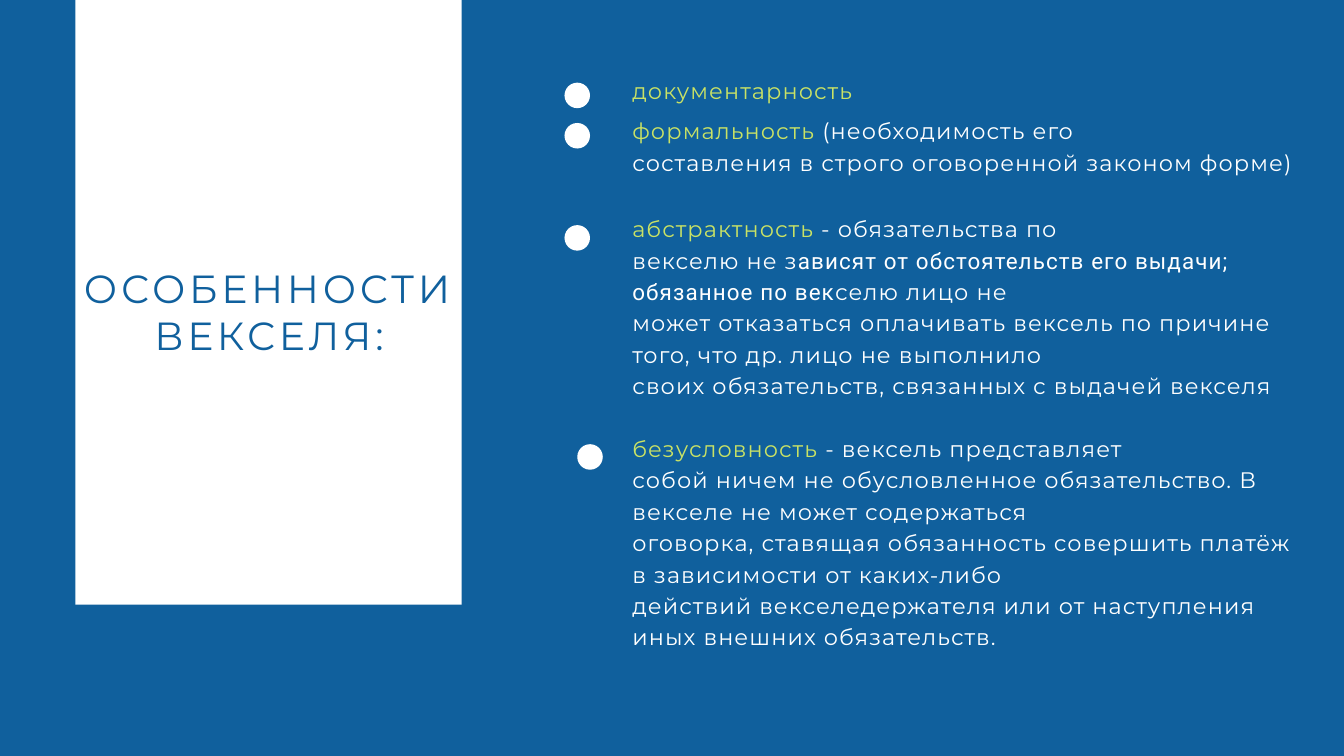
from pptx import Presentation
from pptx.dml.color import RGBColor
from pptx.enum.shapes import MSO_SHAPE as SHAPE
from pptx.enum.text import MSO_ANCHOR as ANCHOR, MSO_AUTO_SIZE as AUTO_SIZE, PP_ALIGN as ALIGN
from pptx.util import Inches, Pt

BLUE, WHITE, LIME = "10609D", "FFFFFF", "C9E265"
FONT, ALT_FONT = "Montserrat", "Roboto"
TEXT_LEFT, TEXT_WIDTH = 9.41, 9.84
DOT_LEFT, DOT_SIZE = 8.4, 0.38

# Each feature: text top, height, dot left, dot top, alignment, term, paragraphs of (text, font) runs
FEATURES = [
    (1.08, 0.43, DOT_LEFT, 1.23, ALIGN.JUSTIFY, "документарность", [[]]),
    (1.68, 1.35, DOT_LEFT, 1.83, ALIGN.JUSTIFY, "формальность ", [
        [("(необходимость его", FONT)],
        [("составления в строго оговоренной законом форме)", FONT)],
    ]),
    (3.14, 3.18, DOT_LEFT, 3.35, ALIGN.LEFT, "абстрактность ", [
        [("- обязательства по", FONT)],
        [("векселю не з", FONT),
         ("ависят от обстоятельств его выдачи; обязанное по век", ALT_FONT),
         ("селю лицо не", FONT)],
        [("может отказаться оплачивать вексель по причине того, что др. лицо не выполнило", FONT)],
        [("своих обязательств, связанных с выдачей векселя", FONT)],
    ]),
    (6.41, 3.18, DOT_LEFT + 0.19, 6.61, ALIGN.LEFT, "безусловность ", [
        [("- вексель представляет", FONT)],
        [("собой ничем не обусловленное обязательство. В векселе не может содержаться", FONT)],
        [("оговорка, ставящая обязанность совершить платёж в зависимости от каких-либо", FONT)],
        [("действий векселедержателя или от наступления иных внешних обязательств.", FONT)],
    ]),
]


def rgb(color):
    return RGBColor.from_string(color)


def add_run(p, text, size=24, color=WHITE, font=FONT, tracking=1.2):
    r = p.add_run()
    r.text = text
    r.font.size = Pt(size)
    r.font.name = font
    r.font.color.rgb = rgb(color)
    r.font._element.set("spc", str(round(tracking * 100)))


def format_paragraph(p, align, line_spacing):
    p.alignment = align
    p.line_spacing = Pt(line_spacing)
    p.space_before = p.space_after = Pt(0)


def format_frame(tf):
    tf.margin_left = tf.margin_top = tf.margin_right = tf.margin_bottom = 0
    tf.word_wrap = True
    tf.vertical_anchor = ANCHOR.TOP
    tf.auto_size = AUTO_SIZE.SHAPE_TO_FIT_TEXT


def add_filled(s, kind, left, top, width, height, color=WHITE):
    sp = s.shapes.add_shape(kind, Inches(left), Inches(top), Inches(width), Inches(height))
    sp.shadow.inherit = False
    sp.fill.solid()
    sp.fill.fore_color.rgb = rgb(color)
    sp.line.fill.background()
    return sp


def add_title(s, text):
    """Place the title on a white panel that hangs from the top edge."""
    panel = add_filled(s, SHAPE.RECTANGLE, 1.12, -0.16, 5.75, 9.16)
    title = s.shapes.title
    panel._element.addnext(title._element)
    title.left, title.top, title.width, title.height = map(Inches, (1.19, 3.93, 5.63, 1.4))
    format_frame(title.text_frame)
    p = title.text_frame.paragraphs[0]
    format_paragraph(p, ALIGN.CENTER, 50.4)
    add_run(p, text, size=42, color=BLUE, tracking=4)


def add_feature(s, top, height, dot_left, dot_top, align, term, paragraphs):
    """Add a round marker and a text that opens with a highlighted term."""
    add_filled(s, SHAPE.OVAL, dot_left, dot_top, DOT_SIZE, DOT_SIZE)
    box = s.shapes.add_textbox(Inches(TEXT_LEFT), Inches(top), Inches(TEXT_WIDTH), Inches(height))
    tf = box.text_frame
    format_frame(tf)
    for i, runs in enumerate(paragraphs):
        p = tf.add_paragraph() if i else tf.paragraphs[0]
        format_paragraph(p, align, 33.6)
        if i == 0:
            add_run(p, term, color=LIME)
        for text, font in runs:
            add_run(p, text, font=font)


def main():
    prs = Presentation()
    prs.slide_width, prs.slide_height = Inches(20), Inches(11.25)
    s = prs.slides.add_slide(prs.slide_layouts[5])
    s.background.fill.solid()
    s.background.fill.fore_color.rgb = rgb(BLUE)
    add_title(s, "ОСОБЕННОСТИ ВЕКСЕЛЯ:")
    for feature in FEATURES:
        add_feature(s, *feature)
    prs.save("out.pptx")


if __name__ == "__main__":
    main()
